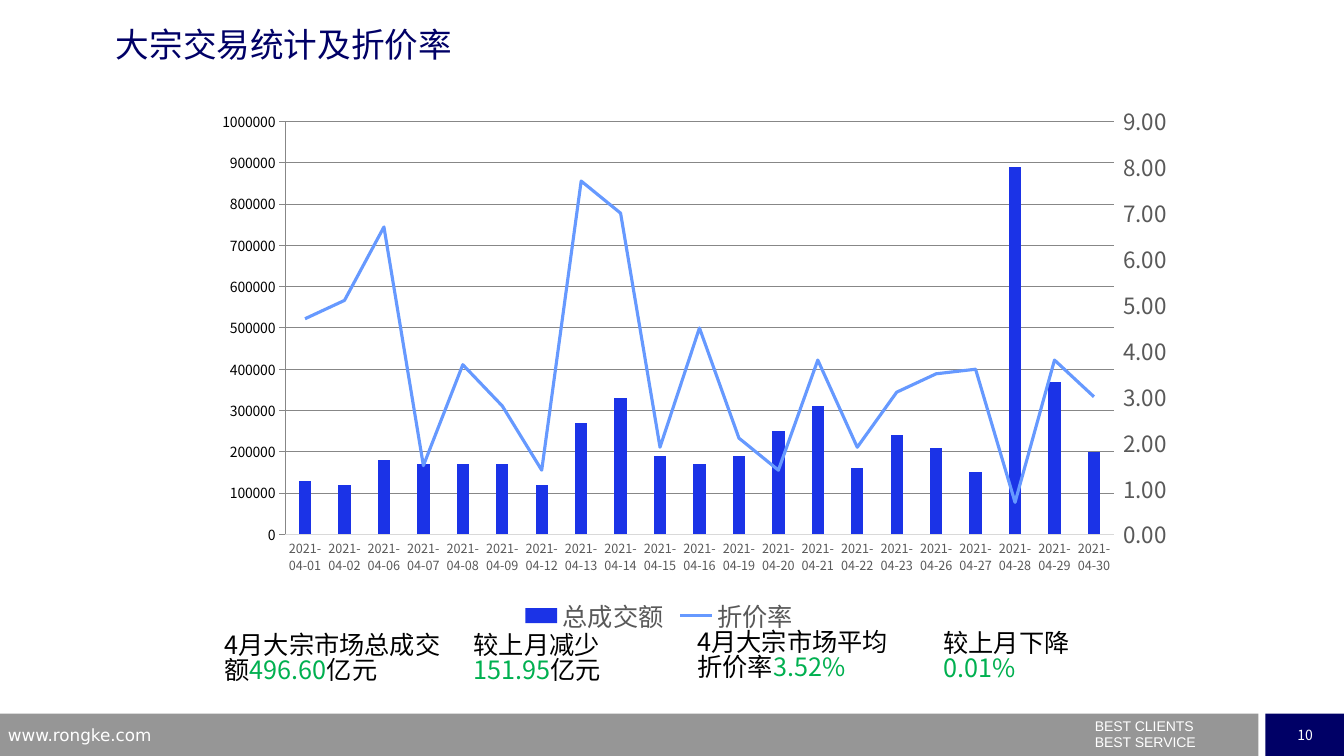
from lxml import etree
from pptx import Presentation
from pptx.chart.axis import ValueAxis
from pptx.chart.data import CategoryChartData
from pptx.dml.color import RGBColor
from pptx.enum.chart import XL_CHART_TYPE as ChartType, XL_LEGEND_POSITION as LegendPosition
from pptx.enum.chart import XL_MARKER_STYLE as MarkerStyle, XL_TICK_MARK as TickMark
from pptx.enum.shapes import MSO_SHAPE as Shape
from pptx.enum.text import MSO_ANCHOR as Anchor, PP_ALIGN as Align
from pptx.oxml import parse_xml
from pptx.oxml.ns import qn
from pptx.util import Inches, Pt

NAVY = RGBColor(0x00, 0x00, 0x66)
GREY = RGBColor(0x96, 0x96, 0x96)
WHITE = RGBColor(0xFF, 0xFF, 0xFF)
BLACK = RGBColor(0x00, 0x00, 0x00)
GREEN = RGBColor(0x00, 0xB0, 0x50)
LABEL = RGBColor(0x59, 0x59, 0x59)
GRID = RGBColor(0xD9, 0xD9, 0xD9)
BAR = RGBColor(0x1B, 0x33, 0xE7)
LINE = RGBColor(0x66, 0x99, 0xFF)
CJK = "Noto Sans CJK SC"

TITLE = "大宗交易统计及折价率"
TURNOVER, DISCOUNT = "总成交额", "折价率"
TRADES = [  # April day, turnover, discount rate
    (1, 130000, 4.7), (2, 120000, 5.1), (6, 180000, 6.7), (7, 170000, 1.5),
    (8, 170000, 3.7), (9, 170000, 2.8), (12, 120000, 1.4), (13, 270000, 7.7),
    (14, 330000, 7), (15, 190000, 1.9), (16, 170000, 4.5), (19, 190000, 2.1),
    (20, 250000, 1.4), (21, 310000, 3.8), (22, 160000, 1.9), (23, 240000, 3.1),
    (26, 210000, 3.5), (27, 150000, 3.6), (28, 890000, 0.7), (29, 370000, 3.8),
    (30, 200000, 3),
]
FINDINGS = [  # left, top, width, paragraphs of (text, colour) runs
    (2.13, 6.25, 2.38, [[("4月大宗市场总成交额", BLACK), ("496.60", GREEN), ("亿元", BLACK)]]),
    (4.6, 6.25, 1.92, [[("较上月减少", BLACK)], [("151.95", GREEN), ("亿元", BLACK)]]),
    (6.82, 6.22, 2.17, [[("4月大宗市场平均折价率", BLACK), ("3.52%", GREEN)]]),
    (9.26, 6.23, 1.65, [[("较上月下降", BLACK), ("0.01%", GREEN)]]),
]
MOTTO = [[("BEST CLIENTS", WHITE)], [("BEST SERVICE", WHITE)]]
WEBSITE = [[("www.rongke.com", WHITE)]]
PAGE = [[("10", WHITE)]]
PLOT_AREA = {"x": 0.146, "y": 0.049, "w": 0.784, "h": 0.759}

CHART_NS = 'xmlns:c="http://schemas.openxmlformats.org/drawingml/2006/chart"'
LINE_PLOT = f"""<c:lineChart {CHART_NS}><c:grouping val="standard"/><c:varyColors val="0"/>
<c:marker val="1"/><c:axId val="501"/><c:axId val="502"/></c:lineChart>"""
HIDDEN_AXIS = f"""<c:catAx {CHART_NS}><c:axId val="501"/>
<c:scaling><c:orientation val="minMax"/></c:scaling><c:delete val="1"/>
<c:axPos val="b"/><c:crossAx val="502"/><c:crosses val="autoZero"/></c:catAx>"""
RIGHT_AXIS = f"""<c:valAx {CHART_NS}><c:axId val="502"/>
<c:scaling><c:orientation val="minMax"/></c:scaling><c:delete val="0"/>
<c:axPos val="r"/><c:majorTickMark val="out"/><c:minorTickMark val="none"/>
<c:tickLblPos val="nextTo"/><c:crossAx val="501"/><c:crosses val="max"/></c:valAx>"""
LAYOUT = (f'<c:layout {CHART_NS}><c:manualLayout><c:layoutTarget val="inner"/>'
          '<c:xMode val="edge"/><c:yMode val="edge"/>'
          + "".join(f'<c:{key} val="{share}"/>' for key, share in PLOT_AREA.items())
          + "</c:manualLayout></c:layout>")


def set_font(font, size, color, name=CJK):
    for key, value in {"size": Pt(size), "name": name, "bold": False}.items():
        setattr(font, key, value)
    font.color.rgb = color


def write(frame, paragraphs, size, name=CJK, spacing=None, gap=0):
    frame.word_wrap = True
    for number, runs in enumerate(paragraphs):
        paragraph = frame.add_paragraph() if number else frame.paragraphs[0]
        paragraph.line_spacing = spacing
        if number:
            paragraph.space_before = Pt(gap)
        for text, color in runs:
            run = paragraph.add_run()
            run.text = text
            set_font(run.font, size, color, name)


def add_text(slide, box, paragraphs, size, **style):
    frame = slide.shapes.add_textbox(*map(Inches, box)).text_frame
    write(frame, paragraphs, size, **style)


def add_band(slide, box, color):
    band = slide.shapes.add_shape(Shape.RECTANGLE, *map(Inches, box))
    band.shadow.inherit = False
    band.fill.solid()
    band.fill.fore_color.rgb = color
    band.line.fill.background()
    return band


def add_footer(slide):
    add_band(slide, (0, 7.08, 12.48, 0.42), GREY)
    page = add_band(slide, (12.55, 7.08, 0.79, 0.42), NAVY).text_frame
    write(page, PAGE, 10)
    page.vertical_anchor = Anchor.MIDDLE
    page.paragraphs[0].alignment = Align.CENTER
    add_text(slide, (10.76, 7.14, 2.56, 0.36), MOTTO, 10, name="Arial", spacing=0.5, gap=5.75)
    add_text(slide, (-0.02, 7.14, 3.22, 0.26), WEBSITE, 12, name="DejaVu Sans")


def add_title(slide):
    title = slide.shapes.title
    title.left, title.top, title.width, title.height = map(Inches, (1.15, 0.28, 9, 0.51))
    frame = title.text_frame
    for side in ("left", "top", "right", "bottom"):
        setattr(frame, f"margin_{side}", 0)
    frame.vertical_anchor = Anchor.TOP
    write(frame, [[(TITLE, NAVY)]], 24, spacing=0.9)
    frame.paragraphs[0].alignment = Align.LEFT


def move_to_right_axis(chart):
    """Draw the second bar series as a line on its own right-hand axis."""
    bars = chart.plots[0]._element
    discount = bars.findall(qn("c:ser"))[1]
    for bar_only in discount.findall(qn("c:invertIfNegative")):
        discount.remove(bar_only)
    line_plot = parse_xml(LINE_PLOT)
    line_plot.find(qn("c:marker")).addprevious(discount)
    bars.addnext(line_plot)
    right = parse_xml(RIGHT_AXIS)
    left = chart.value_axis._element
    left.addnext(right)
    right.addnext(parse_xml(HIDDEN_AXIS))
    return ValueAxis(right)


def add_trade_chart(slide):
    days, turnover, discount = zip(*TRADES)
    data = CategoryChartData()
    data.categories = [f"2021-04-{day:02}" for day in days]
    data.add_series(TURNOVER, turnover)
    data.add_series(DISCOUNT, discount)
    box = map(Inches, (1.3, 0.94, 10.48, 5.4))
    chart = slide.shapes.add_chart(ChartType.COLUMN_CLUSTERED, *box, data).chart
    chart.has_title = False
    set_font(chart.font, 10, BLACK)
    right = move_to_right_axis(chart)

    plot_area = chart.plots[0]._element.getparent()
    for layout in plot_area.findall(qn("c:layout")):
        plot_area.remove(layout)
    plot_area.insert(0, parse_xml(LAYOUT))

    days_axis, left = chart.category_axis, chart.value_axis
    for axis, size, top, step, number_format in (
            (days_axis, 9, None, None, None),
            (left, 16, 1000000, 100000, "#,##0.00"),
            (right, 16, 9, 1, "0.00")):
        set_font(axis.tick_labels.font, size, LABEL)
        axis.major_tick_mark = TickMark.OUTSIDE if axis is right else TickMark.NONE
        if axis is days_axis:
            axis.format.line.color.rgb = GRID
            axis.format.line.width = Pt(0.75)
            continue
        axis.format.line.fill.background()
        axis.minimum_scale, axis.maximum_scale, axis.major_unit = 0, top, step
        axis.tick_labels.number_format = number_format
        axis.tick_labels.number_format_is_linked = False
    grid = left.major_gridlines.format.line
    grid.color.rgb, grid.width = GRID, Pt(0.75)

    bars, lines = chart.plots
    bars.gap_width, bars.overlap, bars.vary_by_categories = 219, -27, False
    bar_fill = bars.series[0].format.fill
    bar_fill.solid()
    bar_fill.fore_color.rgb = BAR
    rate = lines.series[0]
    rate.smooth = False
    rate.marker.style = MarkerStyle.NONE
    rate.format.line.color.rgb, rate.format.line.width = LINE, Pt(2.25)

    chart.has_legend = True
    chart.legend.position = LegendPosition.BOTTOM
    chart.legend.include_in_layout = False
    set_font(chart.legend.font, 18, LABEL)
    return chart


def match_east_asian_fonts(root):
    for latin in list(root.iter(qn("a:latin"))):
        east_asian = etree.Element(qn("a:ea"), typeface=latin.get("typeface"))
        latin.addnext(east_asian)


def main():
    deck = Presentation()
    deck.slide_width, deck.slide_height = Inches(13.33), Inches(7.5)
    slide = deck.slides.add_slide(deck.slide_layouts[5])
    add_footer(slide)
    add_title(slide)
    for left, top, width, paragraphs in FINDINGS:
        add_text(slide, (left, top, width, 0.71), paragraphs, 18, spacing=0.82)
    chart = add_trade_chart(slide)
    for root in (slide.element, chart._chartSpace):
        match_east_asian_fonts(root)
    deck.save("out.pptx")


if __name__ == "__main__":
    main()
